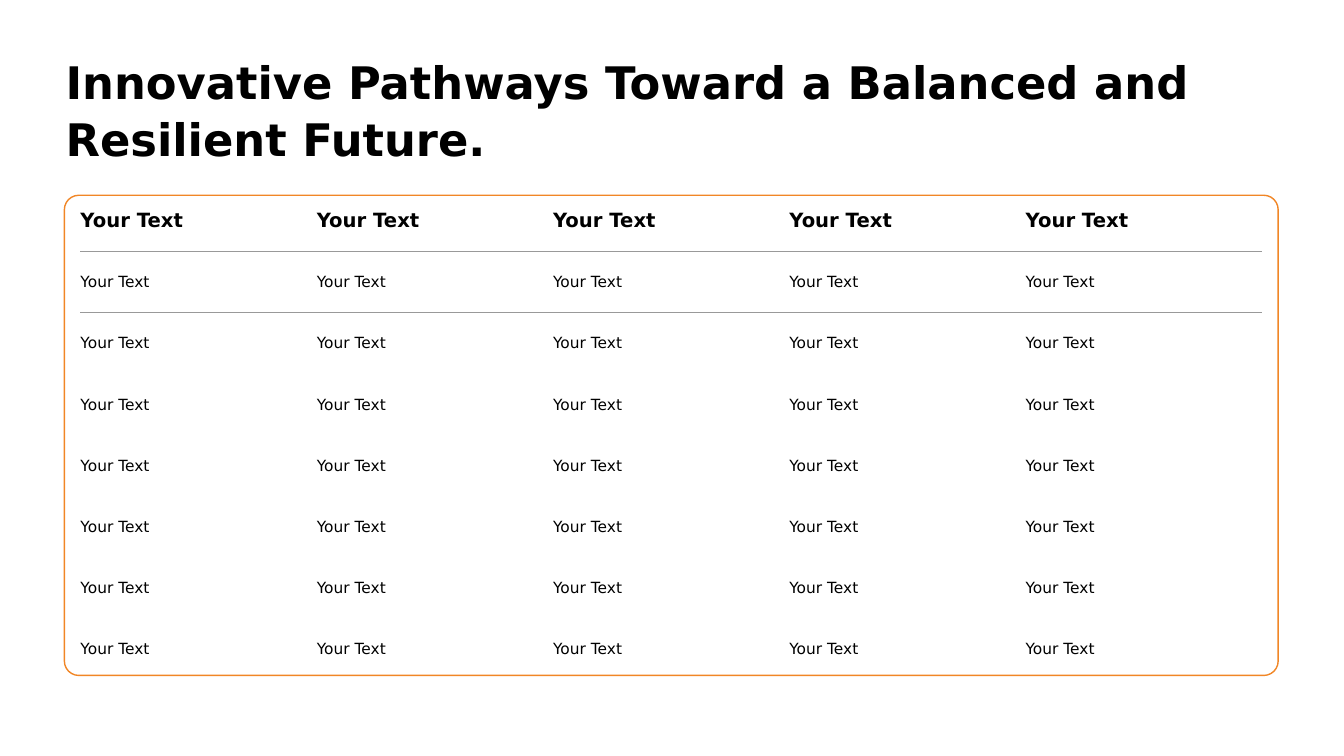
from pptx import Presentation
from pptx.dml.color import RGBColor
from pptx.enum.shapes import MSO_SHAPE
from pptx.enum.text import MSO_ANCHOR
from pptx.oxml import parse_xml
from pptx.oxml.ns import nsdecls, qn
from pptx.util import Pt

BLACK = RGBColor(0, 0, 0)
ORANGE = RGBColor(0xF1, 0x86, 0x26)
GRAY = RGBColor(0x99, 0x99, 0x99)
FONT = "DejaVu Sans"
PLAIN = "{2D5ABB26-0587-4C30-8999-92F81FD0307C}"  # no style, no grid
ROWS, COLS = 8, 5


def style(para, size, bold):
    font = para.font
    font.name, font.size, font.bold = FONT, Pt(size), bold
    font.color.rgb = BLACK


def add_title(slide, left, top, width, height):
    box = slide.shapes.add_textbox(Pt(left), Pt(top), Pt(width), Pt(height))
    frame = box.text_frame
    frame.word_wrap = True
    frame.margin_left = frame.margin_right = 0
    frame.margin_top = frame.margin_bottom = 0
    para = frame.paragraphs[0]
    para.text = "Innovative Pathways Toward a Balanced and Resilient Future."
    para.line_spacing = 1.05
    style(para, 32, True)


def add_rule(cell, side):
    line = parse_xml(
        f'<a:{side} {nsdecls("a")} w="{Pt(0.75)}"><a:solidFill>'
        f'<a:srgbClr val="{GRAY}"/></a:solidFill></a:{side}>')
    # Borders come before the fill
    cell._tc.get_or_add_tcPr().insert(0, line)


def fill_cell(cell, row):
    cell.text = "Your Text"
    cell.vertical_anchor = MSO_ANCHOR.MIDDLE
    cell.margin_left = cell.margin_right = 0
    cell.margin_top = cell.margin_bottom = 0
    cell.fill.background()
    head = row == 0
    style(cell.text_frame.paragraphs[0], 14 if head else 11, head)
    # Rule between header and body
    if row < 2:
        add_rule(cell, "lnB" if head else "lnT")


def add_grid(slide, left, top, width, height):
    # Rounded frame
    frame = slide.shapes.add_shape(
        MSO_SHAPE.ROUNDED_RECTANGLE, Pt(left), Pt(top), Pt(width), Pt(height))
    frame.adjustments[0] = 0.03
    frame.shadow.inherit = False
    frame.fill.background()
    frame.line.color.rgb = ORANGE
    frame.line.width = Pt(1)

    # Table, inset at the sides and slightly taller than the frame
    inset, over = 11.5, 3.5
    wide, tall = width - 2 * inset, height + 2 * over
    table = slide.shapes.add_table(
        ROWS, COLS, Pt(left + inset), Pt(top - over), Pt(wide), Pt(tall)).table
    table.horz_banding = False
    table._tbl.tblPr.find(qn("a:tableStyleId")).text = PLAIN
    for col in table.columns:
        col.width = Pt(wide / COLS)
    for i, row in enumerate(table.rows):
        row.height = Pt(tall / ROWS)
        for cell in row.cells:
            fill_cell(cell, i)


def main():
    deck = Presentation()
    deck.slide_width, deck.slide_height = Pt(960), Pt(540)
    slide = deck.slides.add_slide(deck.slide_layouts[6])
    add_grid(slide, 46, 139.5, 867, 343)
    add_title(slide, 46.8, 37.5, 866, 56)
    deck.save("out.pptx")


if __name__ == "__main__":
    main()
